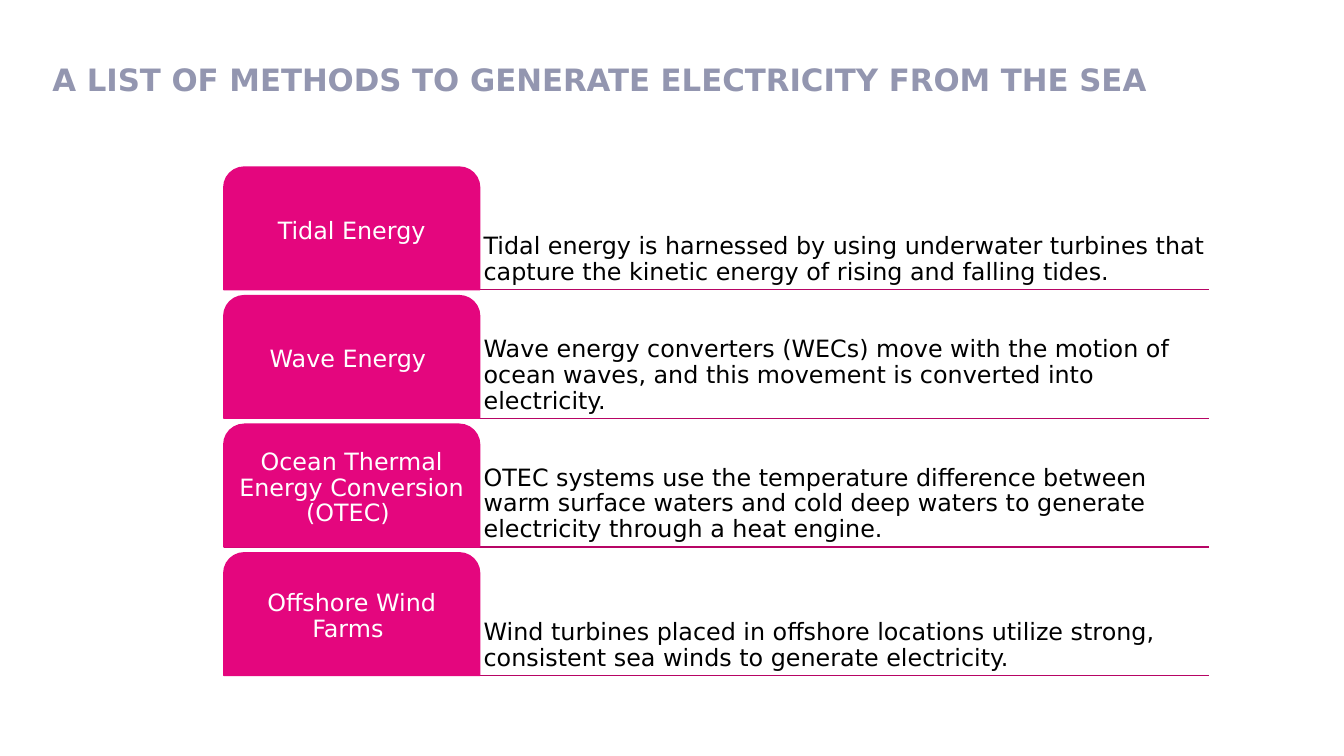
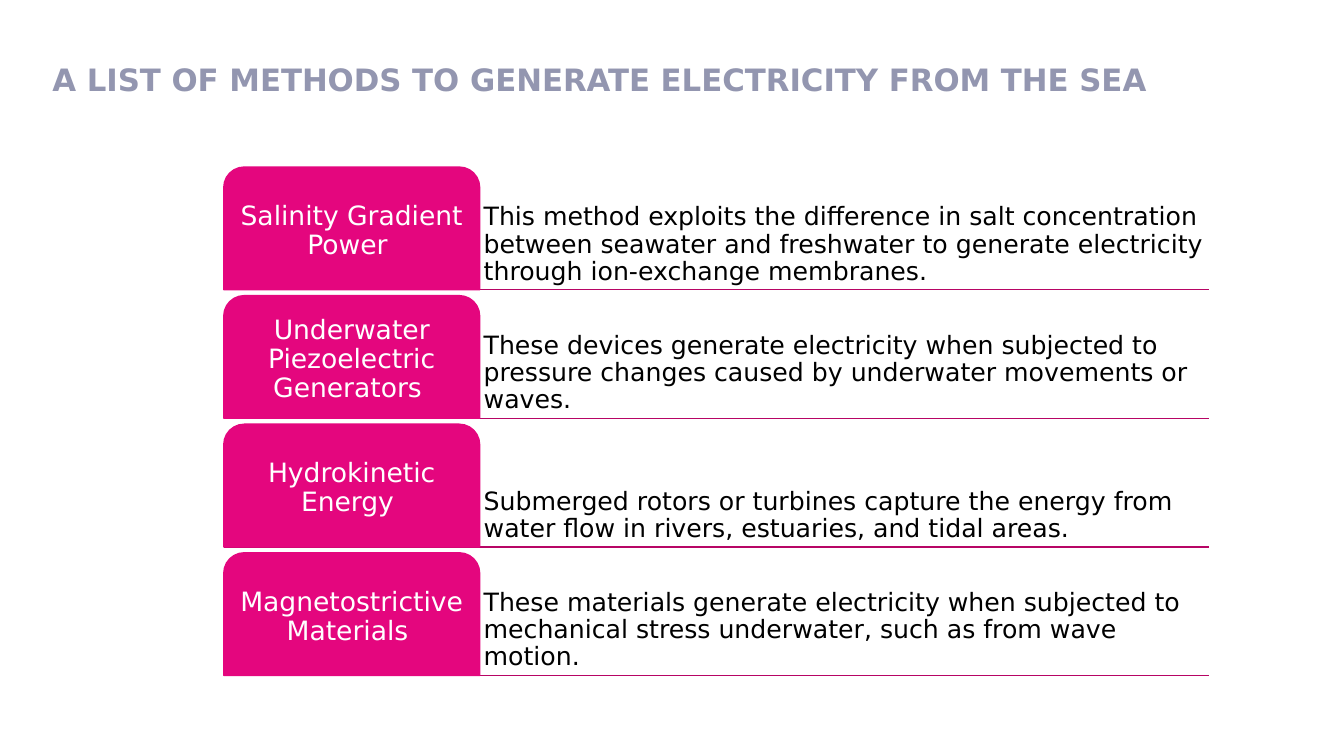
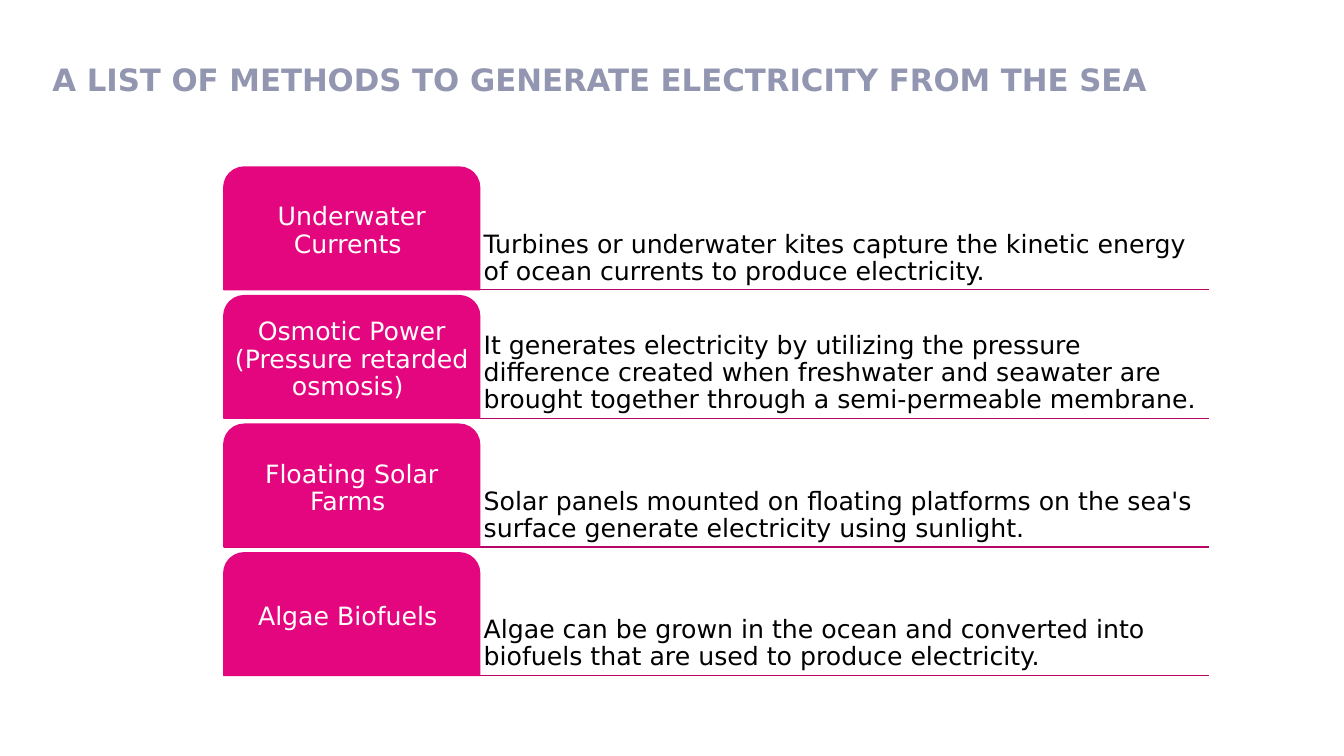
from dataclasses import dataclass

from lxml.etree import SubElement
from pptx import Presentation
from pptx.dml.color import RGBColor
from pptx.enum.shapes import MSO_CONNECTOR as Connector, MSO_SHAPE as Preset
from pptx.enum.text import MSO_ANCHOR as Anchor, PP_ALIGN as Align
from pptx.oxml.ns import qn
from pptx.slide import Slide
from pptx.text.text import TextFrame
from pptx.util import Cm, Pt


@dataclass(frozen=True)
class Theme:
    font: str = "DejaVu Sans"
    heading: RGBColor = RGBColor(0x93, 0x96, 0xB0)
    tab: RGBColor = RGBColor(0xE4, 0x06, 0x7E)
    rule: RGBColor = RGBColor(0xB7, 0x05, 0x65)
    on_tab: RGBColor = RGBColor(0xFF, 0xFF, 0xFF)
    body: RGBColor = RGBColor(0x00, 0x00, 0x00)
    heading_size: int = 22
    line_width: int = 1
    spacing: float = 0.9


@dataclass(frozen=True)
class Method:
    name: str
    description: str


@dataclass(frozen=True)
class MethodList:
    name_size: int
    description_size: int
    methods: tuple[Method, ...]


THEME = Theme()
HEADING = "A LIST OF METHODS TO GENERATE ELECTRICITY FROM THE SEA"

LIST_LEFT, LIST_TOP = 5.64, 4.21
TAB_WIDTH, DESCRIPTION_WIDTH = 6.45, 18.39
ROW_HEIGHT, ROW_GAP = 3.09, 0.15
PADDING = 0.1

METHOD_LISTS = (
    MethodList(17, 17, (
        Method("Tidal Energy",
               "Tidal energy is harnessed by using underwater turbines that "
               "capture the kinetic energy of rising and falling tides."),
        Method("Wave Energy ",
               "Wave energy converters (WECs) move with the motion of ocean "
               "waves, and this movement is converted into electricity."),
        Method("Ocean Thermal Energy Conversion (OTEC) ",
               "OTEC systems use the temperature difference between warm "
               "surface waters and cold deep waters to generate electricity "
               "through a heat engine."),
        Method("Offshore Wind Farms ",
               "Wind turbines placed in offshore locations utilize strong, "
               "consistent sea winds to generate electricity."),
    )),
    MethodList(19, 18, (
        Method("Salinity Gradient Power ",
               "This method exploits the difference in salt concentration "
               "between seawater and freshwater to generate electricity "
               "through ion-exchange membranes."),
        Method("Underwater Piezoelectric Generators ",
               "These devices generate electricity when subjected to pressure "
               "changes caused by underwater movements or waves."),
        Method("Hydrokinetic Energy ",
               "Submerged rotors or turbines capture the energy from water "
               "flow in rivers, estuaries, and tidal areas."),
        Method("Magnetostrictive Materials ",
               "These materials generate electricity when subjected to "
               "mechanical stress underwater, such as from wave motion."),
    )),
    MethodList(18, 18, (
        Method("Underwater Currents ",
               "Turbines or underwater kites capture the kinetic energy of "
               "ocean currents to produce electricity."),
        Method("Osmotic Power (Pressure retarded osmosis) ",
               "It generates electricity by utilizing the pressure difference "
               "created when freshwater and seawater are brought together "
               "through a semi-permeable membrane."),
        Method("Floating Solar Farms ",
               "Solar panels mounted on floating platforms on the sea's "
               "surface generate electricity using sunlight."),
        Method("Algae Biofuels ",
               "Algae can be grown in the ocean and converted into biofuels "
               "that are used to produce electricity."),
    )),
)


def write(frame: TextFrame, text: str, *, size: int, color: RGBColor,
          bold: bool = False, align: Align = Align.LEFT,
          anchor: Anchor = Anchor.TOP, spacing: float = 1.0,
          padding: float = PADDING) -> None:
    frame.word_wrap = True
    frame.vertical_anchor = anchor
    frame.margin_left = frame.margin_right = Cm(padding)
    frame.margin_top = frame.margin_bottom = Cm(padding)
    paragraph = frame.paragraphs[0]
    paragraph.alignment = align
    paragraph.line_spacing = spacing
    run = paragraph.add_run()
    run.text = text
    run.font.name = THEME.font
    run.font.size = Pt(size)
    run.font.bold = bold
    run.font.color.rgb = color


def draw_heading(slide: Slide) -> None:
    heading = slide.shapes.add_textbox(Cm(1.32), Cm(1.52), Cm(29.16), Cm(2.26))
    write(heading.text_frame, HEADING, size=THEME.heading_size,
          color=THEME.heading, bold=True, padding=0)


def draw_rule(slide: Slide, y: float) -> None:
    right = LIST_LEFT + TAB_WIDTH + DESCRIPTION_WIDTH
    rule = slide.shapes.add_connector(
        Connector.STRAIGHT, Cm(LIST_LEFT), Cm(y), Cm(right), Cm(y))
    rule.line.color.rgb = THEME.rule
    rule.line.width = Pt(THEME.line_width)
    SubElement(rule._element.spPr, qn("a:effectLst"))


def draw_method(slide: Slide, method: Method, top: float,
                name_size: int, description_size: int) -> None:
    draw_rule(slide, top + ROW_HEIGHT)
    description = slide.shapes.add_textbox(
        Cm(LIST_LEFT + TAB_WIDTH), Cm(top), Cm(DESCRIPTION_WIDTH), Cm(ROW_HEIGHT))
    write(description.text_frame, method.description, size=description_size,
          color=THEME.body, anchor=Anchor.BOTTOM, spacing=THEME.spacing)
    tab = slide.shapes.add_shape(
        Preset.ROUND_2_SAME_RECTANGLE,
        Cm(LIST_LEFT), Cm(top), Cm(TAB_WIDTH), Cm(ROW_HEIGHT))
    tab.shadow.inherit = False
    tab.fill.solid()
    tab.fill.fore_color.rgb = THEME.tab
    tab.line.color.rgb = THEME.tab
    tab.line.width = Pt(THEME.line_width)
    write(tab.text_frame, method.name, size=name_size, color=THEME.on_tab,
          align=Align.CENTER, anchor=Anchor.MIDDLE, spacing=THEME.spacing)


def main() -> None:
    deck = Presentation()
    deck.slide_width, deck.slide_height = Cm(33.87), Cm(19.05)
    blank = deck.slide_layouts[6]
    for method_list in METHOD_LISTS:
        slide = deck.slides.add_slide(blank)
        draw_heading(slide)
        for row, method in enumerate(method_list.methods):
            draw_method(slide, method, LIST_TOP + row * (ROW_HEIGHT + ROW_GAP),
                        method_list.name_size, method_list.description_size)
    deck.save("out.pptx")


if __name__ == "__main__":
    main()
